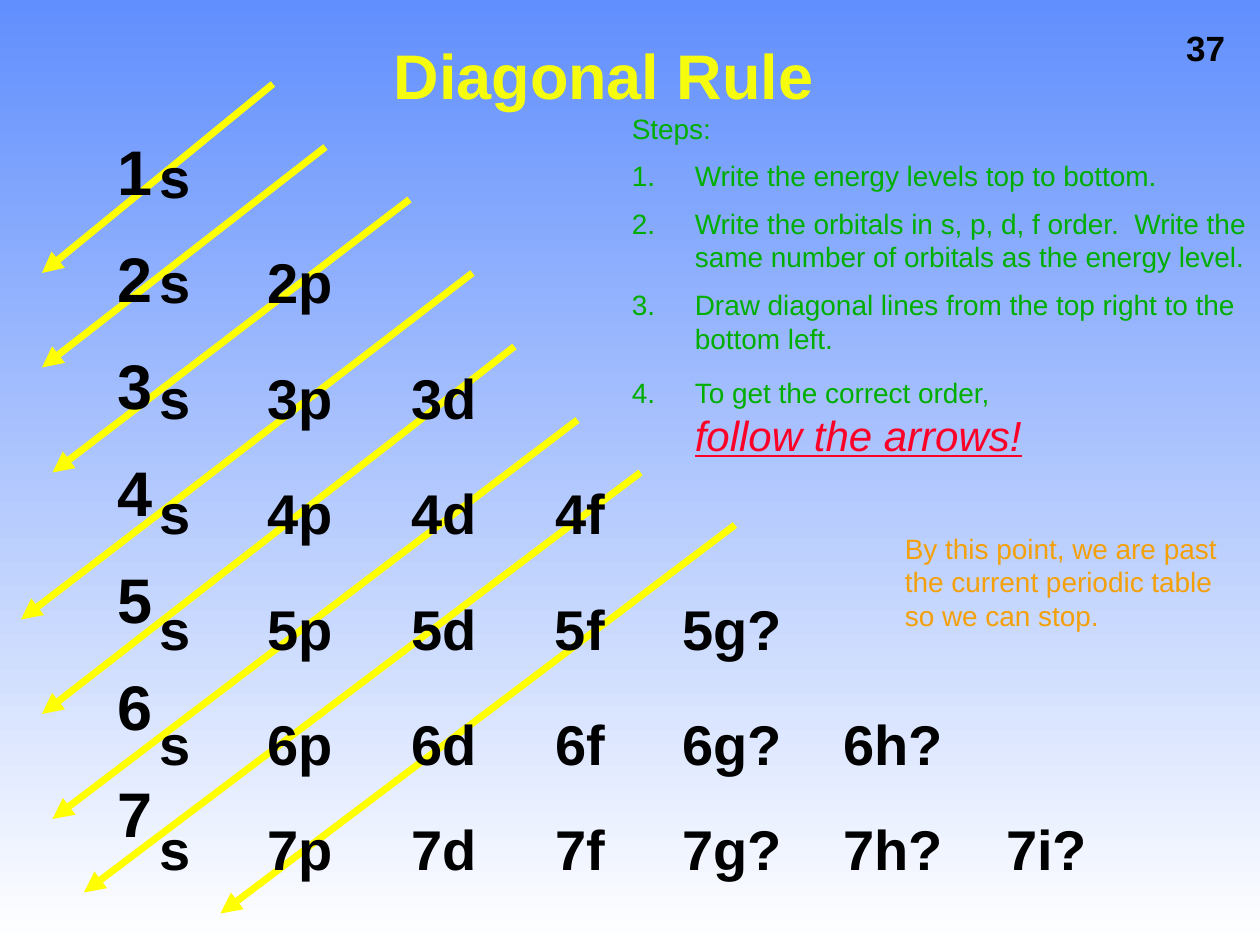
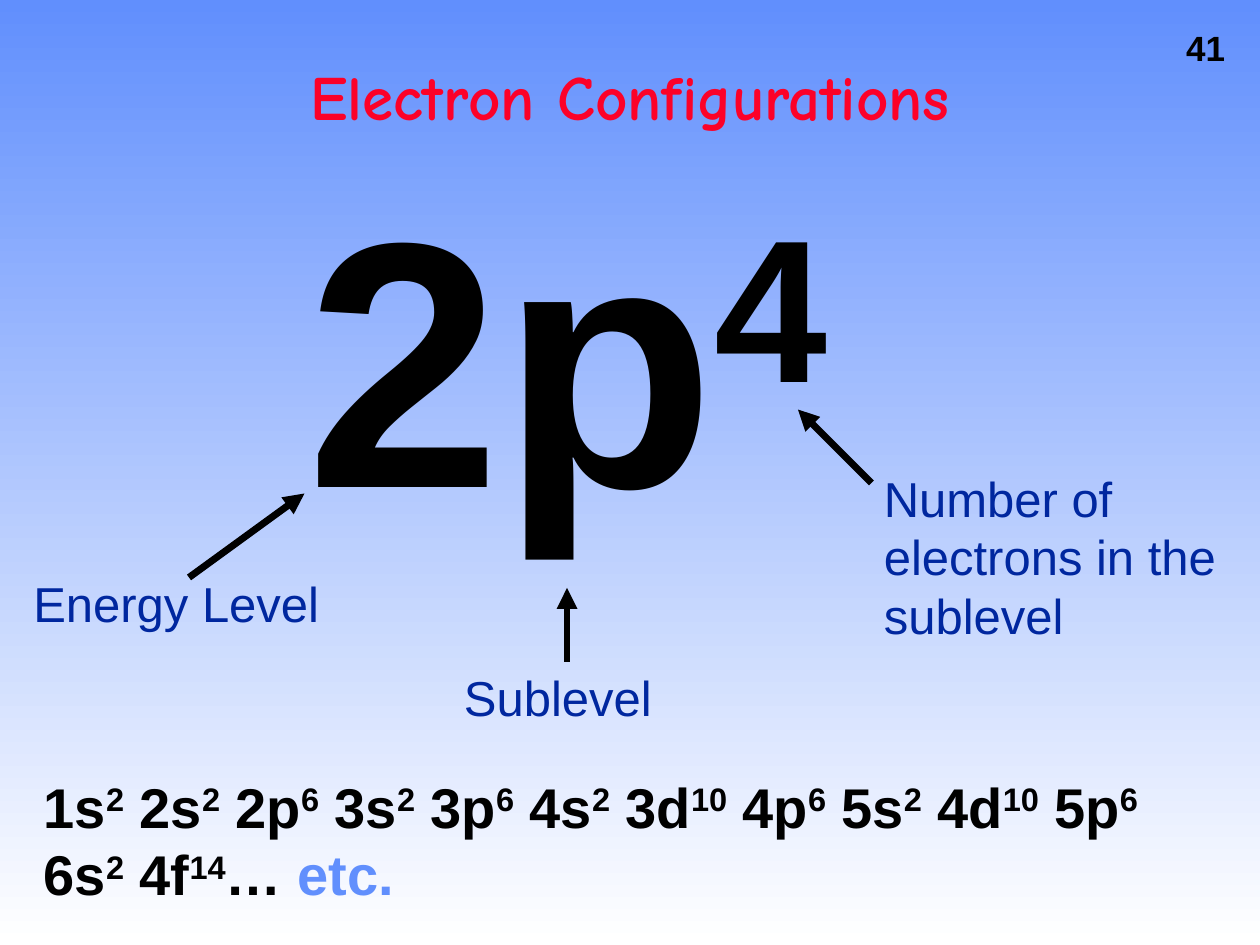
from lxml.etree import SubElement
from pptx import Presentation
from pptx.dml.color import RGBColor
from pptx.enum.shapes import MSO_CONNECTOR
from pptx.enum.text import MSO_ANCHOR, PP_ALIGN
from pptx.oxml.ns import qn
from pptx.util import Inches, Pt

COLORS = {
    "sky": "618FFD",
    "white": "FFFFFF",
    "black": "000000",
    "arrow": "FFFF00",
    "yellow": "F6FC0E",
    "red": "FC0128",
    "green": "00AE00",
    "orange": "F3A00B",
    "navy": "00279F",
}
COLUMNS, ROWS = 120, 90
SLIDE_WIDTH, SLIDE_HEIGHT = Inches(10), Inches(7.5)
TITLE_ONLY = 5

DIAGONALS = [
    (26, 8, 4, 26), (31, 14, 4, 35), (39, 19, 5, 45), (45, 26, 2, 59),
    (49, 33, 4, 68), (55, 40, 5, 78), (61, 45, 8, 85), (70, 50, 21, 87),
]
SUBLEVELS = ["s", "p", "d", "f", "g?", "h?", "i?"]
SUBLEVEL_TABS = [0.86, 2, 3.14, 4.15, 5.43, 6.72]
ORBITAL_ROWS = [(13, 5), (23, 40), (34, 51), (45, 52), (56, 72), (67, 86), (77, 106)]
STEPS = [
    "Write the energy levels top to bottom.",
    "Write the orbitals in s, p, d, f order.  Write the same number of "
    "orbitals as the energy level.",
    "Draw diagonal lines from the top right to the bottom left.",
    "To get the correct order,",
]
FILLING_ORDER = [
    ("1s", "2"), (" 2s", "2"), (" 2p", "6"), (" 3s", "2"), (" 3p", "6"),
    (" 4s", "2"), (" 3d", "10"), (" 4p", "6"), (" 5s", "2"), (" 4d", "10"),
    (" 5p", "6"), (" 6s", "2"), (" 4f", "14"),
]


def rgb(name):
    return RGBColor.from_string(COLORS[name])


def across(columns):
    return int(SLIDE_WIDTH * columns / COLUMNS)


def down(rows):
    return int(SLIDE_HEIGHT * rows / ROWS)


def grid(left, top, width, height):
    return across(left), down(top), across(width), down(height)


def style(font, size, color, bold=False, name="Arial"):
    font.name, font.size, font.bold = name, Pt(size), bold
    font.color.rgb = rgb(color)


def space_before(para, percent):
    spacing = SubElement(para._p.get_or_add_pPr(), qn("a:spcBef"))
    SubElement(spacing, qn("a:spcPct")).set("val", str(percent * 1000))


def hang(para, numbered):
    properties = para._p.get_or_add_pPr()
    properties.set("marL", str(Inches(0.5)))
    properties.set("indent", str(-Inches(0.5)))
    if numbered:
        SubElement(properties, qn("a:buAutoNum")).set("type", "arabicPeriod")


def set_tabs(para, stops):
    tabs = SubElement(para._p.get_or_add_pPr(), qn("a:tabLst"))
    for stop in stops:
        tab = SubElement(tabs, qn("a:tab"))
        tab.set("pos", str(Inches(stop)))
        tab.set("algn", "l")


def add_span(para, text, raised=False):
    span = para.add_run()
    span.text = text
    if raised:
        span.font._element.set("baseline", "30000")
    return span


def add_box(page, place):
    box = page.shapes.add_textbox(*grid(*place))
    box.text_frame.word_wrap = True
    return box


def add_text(page, place, text, size, color, bold=False, before=50):
    box = add_box(page, place)
    para = box.text_frame.paragraphs[0]
    para.text = text
    if before:
        space_before(para, before)
    style(para.font, size, color, bold)
    return box


def add_arrow(page, start_column, start_row, end_column, end_row, color):
    arrow = page.shapes.add_connector(
        MSO_CONNECTOR.STRAIGHT, across(start_column), down(start_row),
        across(end_column), down(end_row))
    arrow.line.color.rgb = rgb(color)
    arrow.line.width = Pt(4)
    SubElement(arrow.line._get_or_add_ln(), qn("a:tailEnd")).set("type", "triangle")
    SubElement(arrow._element.spPr, qn("a:effectLst"))
    return arrow


def add_page(deck, number, title, place, color, font_name="Arial"):
    page = deck.slides.add_slide(deck.slide_layouts[TITLE_ONLY])
    heading = page.shapes.title
    heading.left, heading.top, heading.width, heading.height = grid(*place)
    heading.text_frame.vertical_anchor = MSO_ANCHOR.MIDDLE
    para = heading.text_frame.paragraphs[0]
    para.text = title
    para.alignment = PP_ALIGN.CENTER
    para.line_spacing = 0.9
    style(para.font, 36, color, True, font_name)
    number_box = add_text(page, (111.8, 1.9, 6.5, 5.2), str(number), 20, "black", True, 0)
    number_box.text_frame.word_wrap = False
    return page


def paint_background(deck):
    fill = deck.slide_master.background.fill
    fill.gradient()
    fill.gradient_angle = 270
    for stop, position, color in zip(fill.gradient_stops, (0, 1), ("sky", "white")):
        stop.position = position
        stop.color.rgb = rgb(color)


def add_orbitals(page):
    for level, (top, width) in enumerate(ORBITAL_ROWS, 1):
        names = ["s"] + [f"{level}{letter}" for letter in SUBLEVELS[1:level]]
        box = add_box(page, (14, top, width, 7.5))
        para = box.text_frame.paragraphs[0]
        para.text = "\t".join(names)
        set_tabs(para, SUBLEVEL_TABS[:level - 1])
        style(para.font, 32, "black", True)


def add_levels(page):
    frame = add_box(page, (10, 12, 5, 73.3)).text_frame
    for level in range(1, len(ORBITAL_ROWS) + 1):
        para = frame.paragraphs[0] if level == 1 else frame.add_paragraph()
        para.text = str(level)
        space_before(para, 50)
        style(para.font, 36, "black", True)


def add_steps(page):
    frame = add_box(page, (59, 10, 61, 38)).text_frame
    for index, text in enumerate(["Steps:"] + STEPS):
        para = frame.add_paragraph() if index else frame.paragraphs[0]
        para.text = text
        space_before(para, 50)
        hang(para, numbered=index > 0)
        style(para.font, 16, "green")
    para.add_line_break()
    span = add_span(para, "follow the arrows!")
    style(span.font, 24, "red")
    span.font.italic = span.font.underline = True


def add_notation(page):
    para = add_box(page, (28, 17, 57, 32)).text_frame.paragraphs[0]
    add_span(para, "2p")
    add_span(para, "4", raised=True)
    space_before(para, 30)
    para.line_spacing = 0.9
    style(para.font, 200, "black", True)


def add_filling_order(page):
    para = add_box(page, (3, 73, 113, 14)).text_frame.paragraphs[0]
    for orbital, electrons in FILLING_ORDER:
        add_span(para, orbital)
        add_span(para, electrons, raised=True)
    add_span(para, "… ")
    add_span(para, "etc.").font.color.rgb = rgb("sky")
    space_before(para, 50)
    style(para.font, 32, "black", True)


def build_diagonal_rule(deck):
    page = add_page(deck, 37, "Diagonal Rule", (29, 0, 57, 15), "yellow")
    for diagonal in DIAGONALS:
        add_arrow(page, *diagonal, "arrow")
    add_orbitals(page)
    add_levels(page)
    add_steps(page)
    add_text(page, (85, 50, 35, 10.8),
             "By this point, we are past the current periodic table so we can stop.",
             16, "orange")


def build_configurations(deck):
    page = add_page(deck, 41, "Electron Configurations", (13, 2, 94, 15), "red", "Comic Neue")
    add_notation(page)
    add_text(page, (2, 54, 32, 6.8), "Energy Level", 28, "navy")
    sublevel = add_text(page, (43, 63, 22, 6.8), "Sublevel", 28, "navy")
    add_text(page, (83, 44, 34, 18), "Number of electrons in the sublevel", 28, "navy")
    add_arrow(page, 18, 55, 29, 47, "black")
    add_arrow(page, 54, 63, 54, 56, "black").begin_connect(sublevel, 0)
    add_arrow(page, 83, 46, 76, 39, "black")
    add_filling_order(page)


def main():
    deck = Presentation()
    deck.slide_width, deck.slide_height = SLIDE_WIDTH, SLIDE_HEIGHT
    paint_background(deck)
    build_diagonal_rule(deck)
    build_configurations(deck)
    deck.save("out.pptx")


if __name__ == "__main__":
    main()
